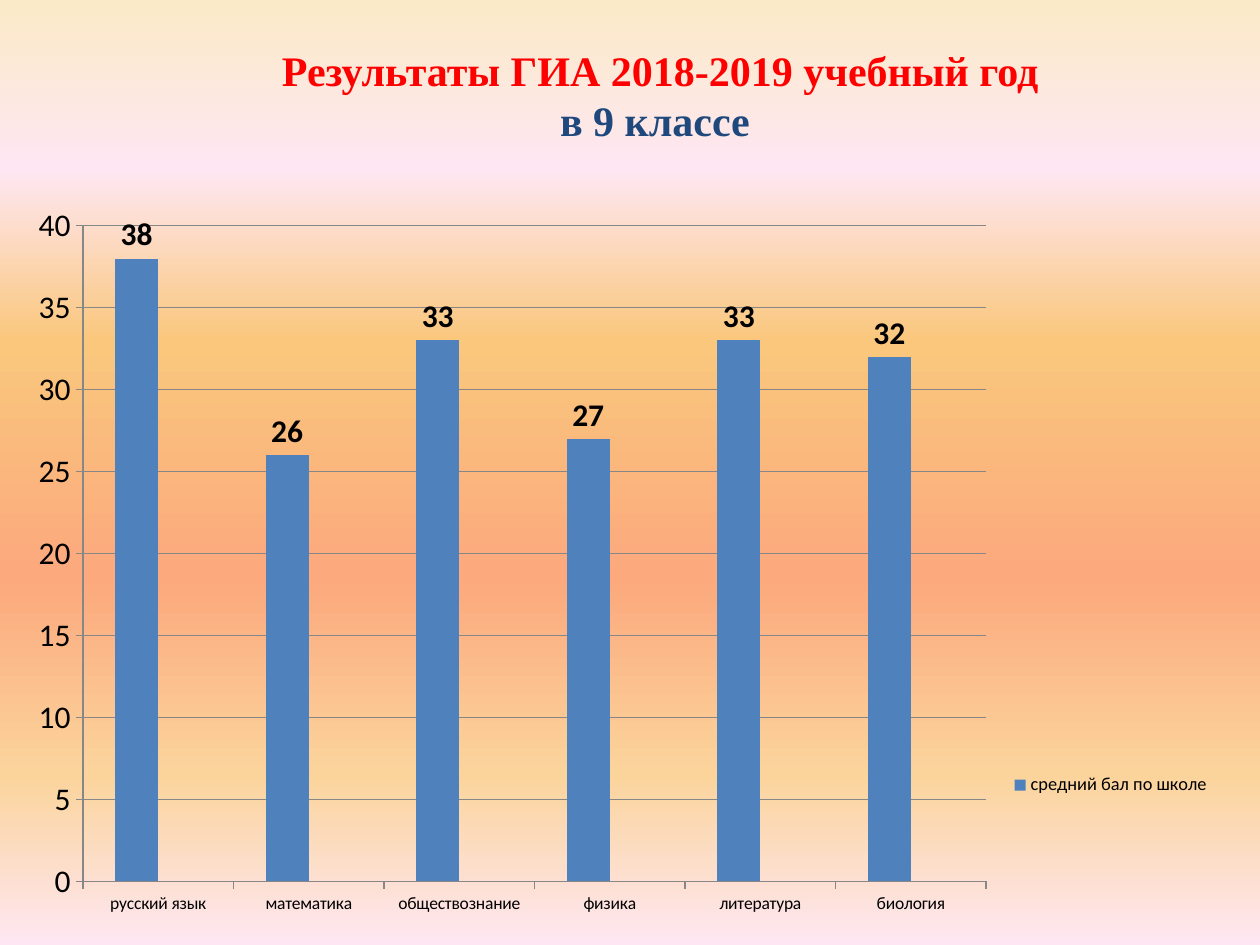
import lxml.etree
import pptx
import pptx.chart.data
import pptx.dml.color
import pptx.enum.chart
import pptx.enum.text
import pptx.oxml
import pptx.oxml.ns
import pptx.util

Pt = pptx.util.Pt
RGBColor = pptx.dml.color.RGBColor
qn = pptx.oxml.ns.qn

RED = RGBColor(0xFF, 0x00, 0x00)
NAVY = RGBColor(0x1F, 0x49, 0x7D)
BLACK = RGBColor(0x00, 0x00, 0x00)
GREY = RGBColor(0x87, 0x87, 0x87)
BLUE = RGBColor(0x4F, 0x81, 0xBD)
BRICK = RGBColor(0xC0, 0x50, 0x4D)
BACKGROUND_STOPS = [
    (0, RGBColor(0xFB, 0xEA, 0xC7)),
    (18, RGBColor(0xFE, 0xE7, 0xF2)),
    (36, RGBColor(0xFA, 0xC7, 0x7D)),
    (61, RGBColor(0xFB, 0xA9, 0x7D)),
    (82, RGBColor(0xFB, 0xD4, 0x9C)),
    (100, RGBColor(0xFE, 0xE7, 0xF2)),
]

SUBJECTS = ["русский язык", "математика", "обществознание",
            "физика", "литература", "биология"]
SCORES = [38, 26, 33, 27, 33, 32]


def format_font(font, size, color=BLACK, name="Calibri", bold=False):
    font.size = Pt(size)
    font.name = name
    font.bold = bold
    font.color.rgb = color


def add_text(paragraph, text, **font_format):
    run = paragraph.add_run()
    run.text = text
    format_font(run.font, **font_format)


def paint_background(slide):
    fill = slide.background.fill
    fill.gradient()
    fill.gradient_angle = 270  # counter-clockwise, so top to bottom
    stop_list = next(slide.background._cSld.iter(qn("a:gsLst")))
    for stop in list(stop_list):
        stop_list.remove(stop)
    for percent, color in BACKGROUND_STOPS:
        stop = lxml.etree.SubElement(stop_list, qn("a:gs"), pos=str(percent * 1000))
        lxml.etree.SubElement(stop, qn("a:srgbClr"), val=str(color))


def add_title(slide):
    box = slide.shapes.add_textbox(Pt(87.84), Pt(9.36), Pt(578.88), Pt(89.28))
    frame = box.text_frame
    frame.word_wrap = True
    frame.vertical_anchor = pptx.enum.text.MSO_ANCHOR.MIDDLE
    paragraph = frame.paragraphs[0]
    paragraph.alignment = pptx.enum.text.PP_ALIGN.CENTER
    title_format = dict(size=24, name="Times New Roman", bold=True)
    add_text(paragraph, "Результаты ГИА 2018-2019 учебный год", color=RED, **title_format)
    paragraph.add_line_break()
    add_text(paragraph, "в 9 классе ", color=NAVY, **title_format)


def set_layout(parent, index, inner=False, **fractions):
    """Place a chart part by fractions of the chart area."""
    for old_layout in parent.findall(qn("c:layout")):
        parent.remove(old_layout)
    layout = pptx.oxml.parse_xml(
        '<c:layout xmlns:c="http://schemas.openxmlformats.org/drawingml/2006/chart">'
        "<c:manualLayout/></c:layout>")
    values = [("layoutTarget", "inner")] if inner else []
    values += [("xMode", "edge"), ("yMode", "edge")] + list(fractions.items())
    for tag, value in values:
        lxml.etree.SubElement(layout[0], qn("c:" + tag), val=str(value))
    parent.insert(index, layout)


def format_axis(axis, size):
    axis.major_tick_mark = pptx.enum.chart.XL_TICK_MARK.OUTSIDE
    axis.minor_tick_mark = pptx.enum.chart.XL_TICK_MARK.NONE
    axis.format.line.color.rgb = GREY
    axis.format.line.width = Pt(0.75)
    format_font(axis.tick_labels.font, size)


def format_series(series, color, label_size):
    series.format.fill.solid()
    series.format.fill.fore_color.rgb = color
    labels = series.data_labels
    labels.show_value = True
    labels.position = pptx.enum.chart.XL_LABEL_POSITION.OUTSIDE_END
    format_font(labels.font, label_size, bold=True)


def format_legend(chart):
    chart.has_legend = True
    legend = chart.legend
    legend.position = pptx.enum.chart.XL_LEGEND_POSITION.RIGHT
    legend.include_in_layout = False
    format_font(legend.font, 10.5)
    set_layout(legend._element, 1, x=0.82, y=0.78, w=0.17, h=0.05)
    # Hide the entry of the empty series
    entry = legend._element.makeelement(qn("c:legendEntry"))
    lxml.etree.SubElement(entry, qn("c:idx"), val="1")
    lxml.etree.SubElement(entry, qn("c:delete"), val="1")
    legend._element.insert(1, entry)


def add_score_chart(slide):
    data = pptx.chart.data.CategoryChartData()
    data.categories = SUBJECTS
    data.add_series("средний бал по школе", SCORES)
    data.add_series("Series 2", [None] * len(SUBJECTS))
    chart = slide.shapes.add_chart(
        pptx.enum.chart.XL_CHART_TYPE.COLUMN_CLUSTERED,
        Pt(8.64), Pt(110.16), Pt(691.92), Pt(420.48), data).chart
    chart.has_title = False
    format_font(chart.font, 18)

    # Plot and series
    plot = chart.plots[0]
    plot.gap_width = 150
    plot.overlap = 0
    plot.vary_by_categories = False
    for series, color, size in zip(plot.series, (BLUE, BRICK), (18, 14)):
        format_series(series, color, size)
    plot_area = next(chart._chartSpace.iter(qn("c:plotArea")))
    set_layout(plot_area, 0, inner=True, x=0.056, y=0.045, w=0.746, h=0.891)

    # Axes
    format_axis(chart.category_axis, 10)
    value_axis = chart.value_axis
    format_axis(value_axis, 18)
    value_axis.minimum_scale, value_axis.maximum_scale = 0, 40
    value_axis.major_unit = 5
    value_axis.has_major_gridlines = True
    value_axis.major_gridlines.format.line.color.rgb = GREY
    value_axis.major_gridlines.format.line.width = Pt(0.75)

    format_legend(chart)


def main():
    presentation = pptx.Presentation()
    presentation.slide_width = Pt(720)
    presentation.slide_height = Pt(540)
    slide = presentation.slides.add_slide(presentation.slide_layouts[6])
    paint_background(slide)
    add_title(slide)
    add_score_chart(slide)
    presentation.save("out.pptx")


if __name__ == "__main__":
    main()
